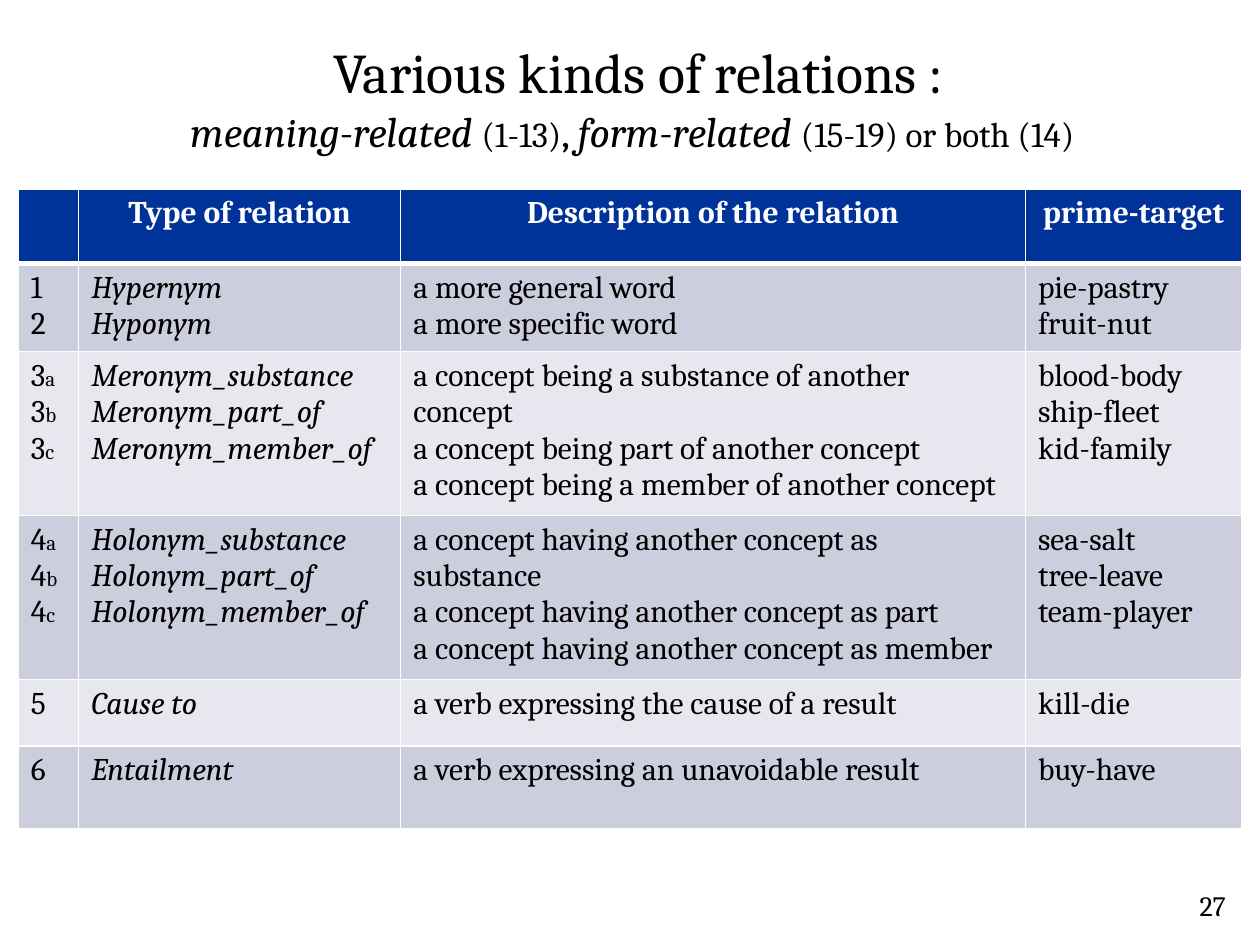
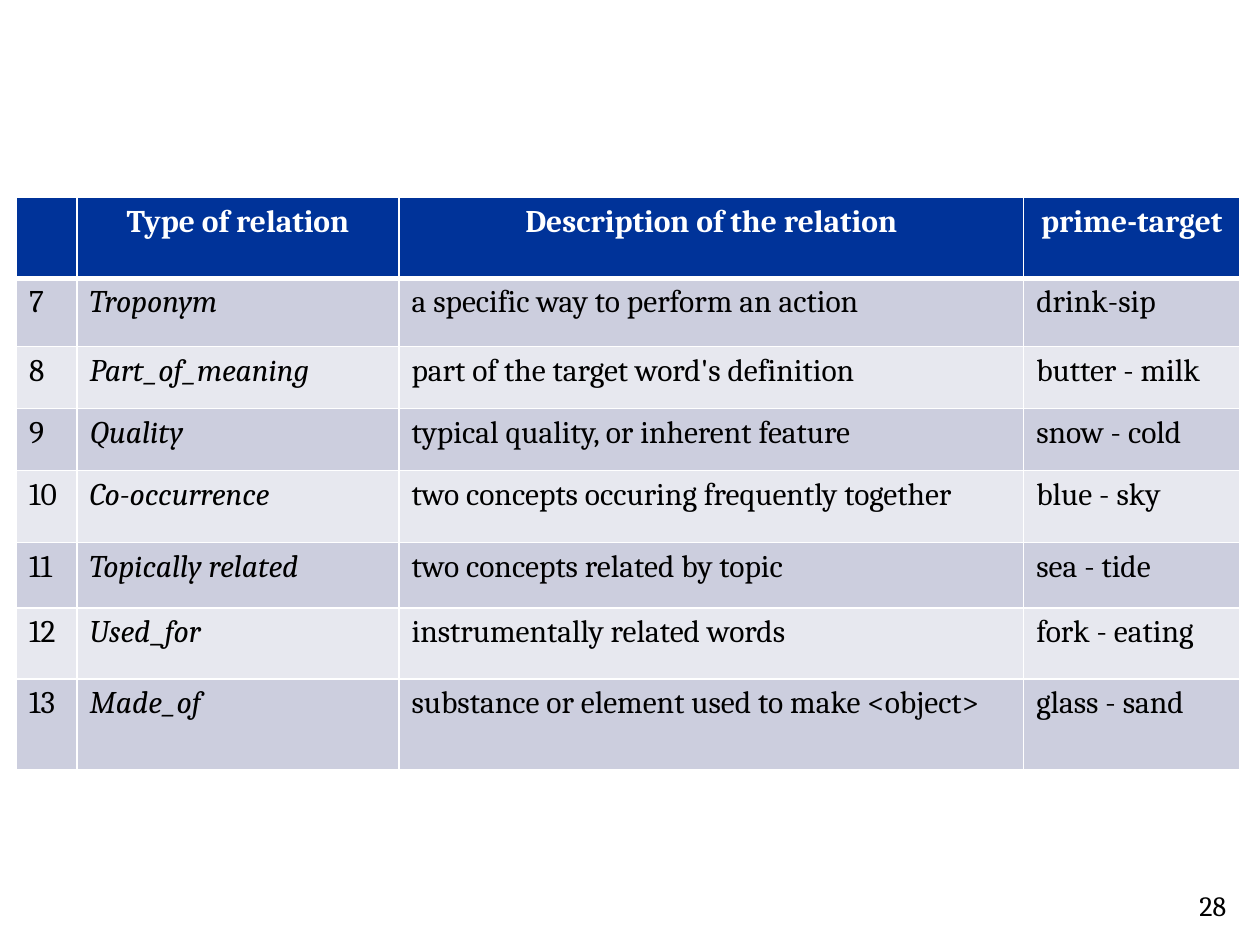
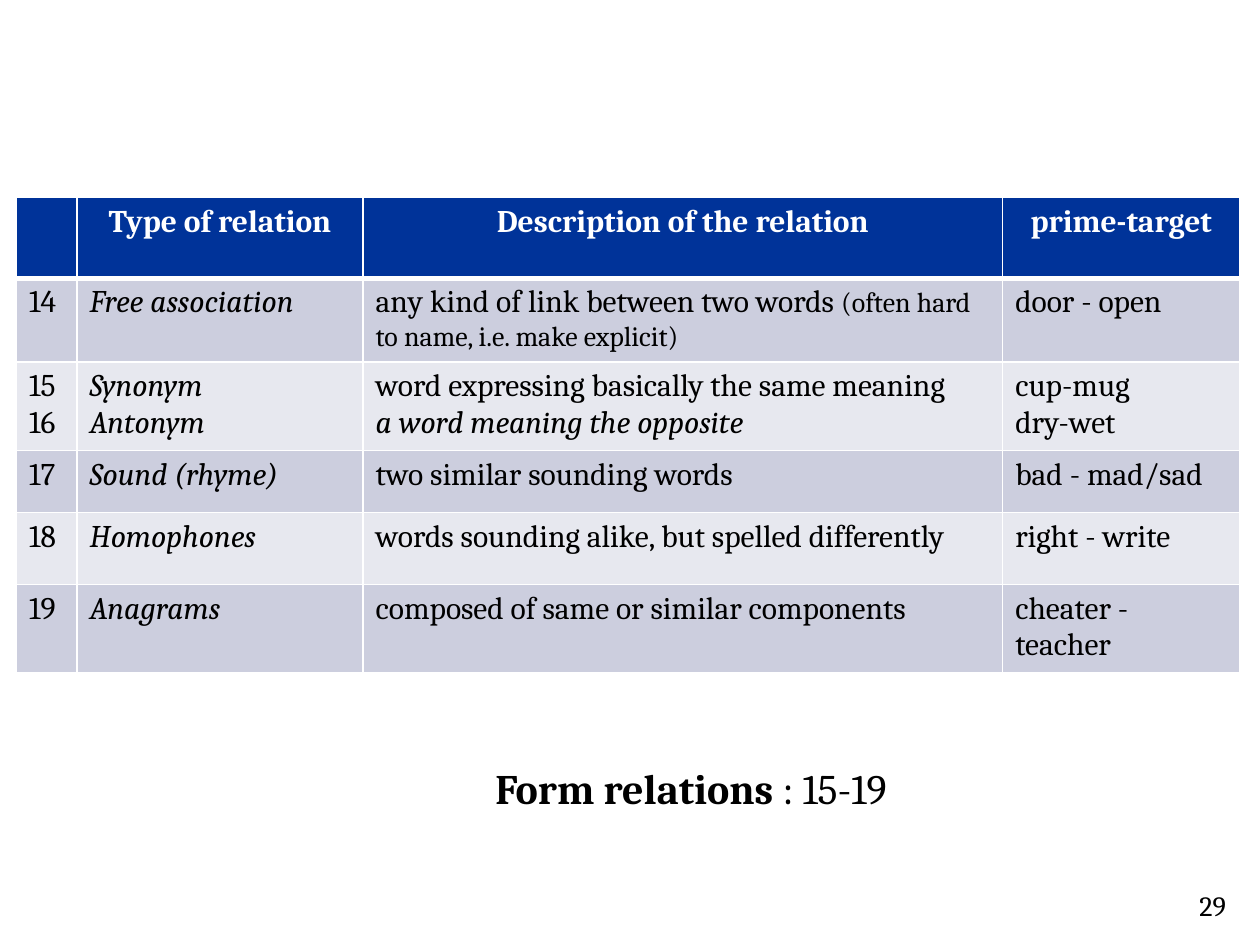
from dataclasses import dataclass

from lxml.etree import fromstring
from pptx import Presentation
from pptx.dml.color import RGBColor
from pptx.enum.text import MSO_ANCHOR, MSO_AUTO_SIZE, PP_ALIGN
from pptx.oxml.ns import nsdecls
from pptx.util import Pt


@dataclass(frozen=True)
class Theme:
    font: str = "Cambria"
    black: str = "000000"
    white: str = "FFFFFF"
    header: str = "003399"
    bands: tuple = ("CCCEDE", "E7E8EF")
    title: float = 32
    subtitle: float = 24
    range: float = 20
    cell: float = 18
    note: float = 16
    letter: float = 12
    rule: float = 1
    header_rule: float = 3


T = Theme()
TITLE_ONLY, BLANK = 5, 6


class Deck:
    """Holds the theme, the presentation and the current slide."""

    def __init__(self, theme):
        self.t = theme
        self.prs = Presentation()
        self.prs.slide_width, self.prs.slide_height = Pt(720), Pt(540)
        self.s = None

    def slide(self, layout, number):
        self.s = self.prs.slides.add_slide(self.prs.slide_layouts[layout])
        # Drop the layout's unused placeholders, keep the title
        for ph in list(self.s.placeholders):
            if ph.placeholder_format.idx:
                ph.element.getparent().remove(ph.element)
        self.text(666, 504, 54, 27, [str(number)], self.t.note,
                  align=PP_ALIGN.CENTER)

    def style(self, font, size=None, bold=None, italic=None, color=None):
        if size is not None:
            font.size = Pt(size)
        if bold is not None:
            font.bold = bold
        if italic is not None:
            font.italic = italic
        if color is not None:
            font.color.rgb = RGBColor.from_string(color)

    def para(self, p, content, size, align=PP_ALIGN.LEFT, bold=False,
             italic=False, color=None):
        """Content is a string, or a list of (text, run style) pairs."""
        p.alignment = align
        p.font.name = self.t.font
        self.style(p.font, size, bold, italic, color or self.t.black)
        runs = [(content, {})] if isinstance(content, str) else content
        for text, look in runs:
            if text:
                r = p.add_run()
                r.text = text
                self.style(r.font, **look)

    def fill_frame(self, tf, paras, size, **look):
        for i, content in enumerate(paras):
            p = tf.add_paragraph() if i else tf.paragraphs[0]
            self.para(p, content, size, **look)

    def text(self, x, y, w, h, paras, size, wrap=True, **look):
        sp = self.s.shapes.add_textbox(Pt(x), Pt(y), Pt(w), Pt(h))
        tf = sp.text_frame
        tf.word_wrap = wrap
        tf.auto_size = MSO_AUTO_SIZE.SHAPE_TO_FIT_TEXT
        self.fill_frame(tf, paras, size, **look)

    def title(self, x, y, w, h, heading, subtitle):
        sp = self.s.shapes.title
        sp.left, sp.top, sp.width, sp.height = Pt(x), Pt(y), Pt(w), Pt(h)
        tf = sp.text_frame
        tf.word_wrap = False
        tf.auto_size = MSO_AUTO_SIZE.NONE
        tf.vertical_anchor = MSO_ANCHOR.TOP
        self.para(tf.paragraphs[0], heading, self.t.title, PP_ALIGN.CENTER)
        self.para(tf.add_paragraph(), subtitle, self.t.subtitle)

    def borders(self, cell, **widths):
        tc_pr = cell._tc.get_or_add_tcPr()
        for i, side in enumerate("LRTB"):
            width = Pt(widths.get(side, self.t.rule))
            tc_pr.insert(i, fromstring(
                f'<a:ln{side} {nsdecls("a")} w="{width}"><a:solidFill>'
                f'<a:srgbClr val="{self.t.white}"/></a:solidFill></a:ln{side}>'))

    def table(self, x, y, cols, heights, rows):
        t = self.t
        frame = self.s.shapes.add_table(len(heights), len(cols), Pt(x), Pt(y),
                                        Pt(sum(cols)), Pt(sum(heights)))
        tbl = frame.table
        for col, w in zip(tbl.columns, cols):
            col.width = Pt(w)
        for row, h in zip(tbl.rows, heights):
            row.height = Pt(h)
        for i, row in enumerate([HEADER] + rows):
            for j, content in enumerate(row):
                cell = tbl.cell(i, j)
                cell.fill.solid()
                if i == 0:
                    color, edge = t.header, {"B": t.header_rule}
                    look = dict(align=PP_ALIGN.CENTER, bold=True, color=t.white)
                else:
                    color = t.bands[(i - 1) % 2]
                    edge = {"T": t.header_rule} if i == 1 else {}
                    look = dict(italic=j == 1)
                cell.fill.fore_color.rgb = RGBColor.from_string(color)
                self.borders(cell, **edge)
                paras = [content] if isinstance(content, str) else content
                self.fill_frame(cell.text_frame, paras, t.cell, **look)


def lettered(number):
    """Number with a small letter, one paragraph for each of a, b and c."""
    return [[(number, {}), (c, {"size": T.letter})] for c in "abc"]


# Table contents: a cell is a string or a list of paragraphs
HEADER = ["", "Type of relation", "Description of the relation", "prime-target"]

HIERARCHY = [
    [["1", "2"], ["Hypernym", "Hyponym"],
     ["a more general word", "a more specific word"],
     ["pie-pastry", "fruit-nut"]],
    [lettered("3"),
     ["Meronym_substance", "Meronym_part_of", "Meronym_member_of"],
     ["a concept being a substance of another concept",
      "a concept being part of another concept",
      "a concept being a member of another concept"],
     ["blood-body", "ship-fleet", "kid-family"]],
    [lettered("4"),
     ["Holonym_substance", "Holonym_part_of", "Holonym_member_of"],
     ["a concept having another concept as substance",
      "a concept having another concept as part",
      "a concept having another concept as member"],
     ["sea-salt", "tree-leave", "team-player"]],
    ["5", "Cause to", "a verb expressing the cause of a result", "kill-die"],
    ["6", "Entailment", "a verb expressing an unavoidable result", "buy-have"],
]

MEANING = [
    ["7", "Troponym", "a specific way to perform an action", "drink-sip"],
    ["8", "Part_of_meaning", "part of the target word's definition",
     "butter - milk"],
    ["9", "Quality", "typical quality, or inherent feature", "snow - cold"],
    ["10", "Co-occurrence", "two concepts occuring frequently together",
     "blue - sky"],
    ["11", "Topically related", "two concepts related by topic", "sea - tide"],
    ["12", "Used_for", "instrumentally related words", "fork - eating"],
    ["13", "Made_of", "substance or element used to make <object>",
     "glass - sand"],
]

FORM = [
    ["14", "Free association",
     [[("any kind of link between two words ", {}),
       ("(often hard to name, i.e. make explicit)", {"size": T.note})]],
     "door - open"],
    [["15", "16"], ["Synonym", "Antonym"],
     ["word expressing basically the same meaning",
      [("a word meaning the opposite", {"italic": True})]],
     ["cup-mug", "dry-wet"]],
    ["17", "Sound (rhyme)", "two similar sounding words", "bad - mad/sad"],
    ["18", "Homophones", "words sounding alike, but spelled differently",
     "right - write"],
    ["19", "Anagrams", "composed of same or similar components",
     "cheater - teacher"],
]

WIDE_TYPE = [34.5, 184, 357, 123.5]
WIDE_TARGET = [34.5, 163.5, 365.5, 135.5]


def main():
    d = Deck(T)

    # Relations 1-6, with the title
    d.slide(TITLE_ONLY, 27)
    d.title(101.5, 18, 533.5, 75, "Various kinds of relations : ", [
        ("meaning-related ", {"italic": True}),
        ("(1-13)", {"size": T.range}),
        (", ", {}),
        ("form-related ", {"italic": True}),
        ("(15-19) or both (14)", {"size": T.range}),
    ])
    d.table(10.5, 108, WIDE_TYPE, [42.5, 50.5, 72, 72, 38, 47.5], HIERARCHY)

    # Relations 7-13
    d.slide(BLANK, 28)
    d.table(9.5, 113, WIDE_TYPE, [46, 39, 35.5, 35.5, 41, 37.5, 40.5, 52],
            MEANING)

    # Relations 14-19, with the closing remark
    d.slide(BLANK, 29)
    d.table(9.5, 113, WIDE_TARGET, [46, 48, 50.5, 35.5, 41, 37.5], FORM)
    d.text(276, 432, 243.5, 36.5,
           [[("Form relations ", {"bold": True}), (": 15-19", {})]],
           T.subtitle, wrap=False)

    d.prs.save("out.pptx")


if __name__ == "__main__":
    main()
